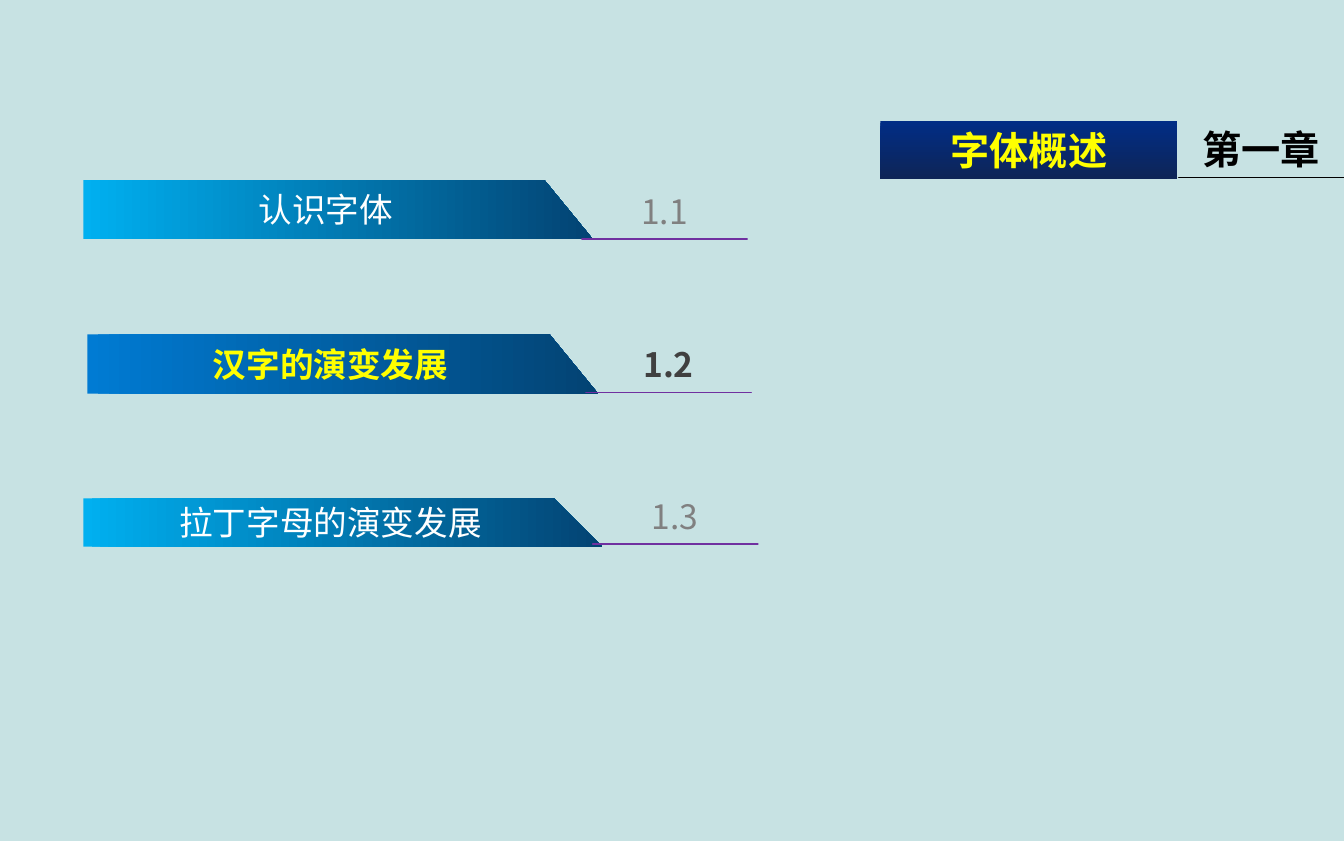
from dataclasses import dataclass

from lxml.etree import SubElement
from pptx import Presentation
from pptx.dml.color import RGBColor as Rgb
from pptx.enum.shapes import MSO_SHAPE as Shape
from pptx.enum.text import MSO_ANCHOR as Anchor, PP_ALIGN as Align
from pptx.oxml.ns import qn
from pptx.util import Inches, Pt


@dataclass(frozen=True)
class Theme:
    """Colours, font and type sizes of the slide."""
    font: str = "Noto Sans CJK SC"
    heading_size: int = 21
    topic_size: int = 18
    rule_width: float = 0.75
    background: str = "C7E2E3"
    heading_fill: tuple = ("012D86", "0E2557")
    topic_fill: tuple = ("00B0F0", "034373")
    current_fill: tuple = ("007BD3", "034373")
    topic_text: str = "FFFFFF"
    highlight: str = "FFFF00"
    number: str = "808080"
    current_number: str = "404040"
    chapter: str = "000000"
    rule: str = "7030A0"


THEME = Theme()


def write(holder, text, size, color, bold=False, insets=(0, 0.04, 0, 0.04)):
    """Put one centred line of text in a shape."""
    frame = holder.text_frame
    frame.word_wrap = True
    frame.vertical_anchor = Anchor.MIDDLE
    (frame.margin_left, frame.margin_top,
     frame.margin_right, frame.margin_bottom) = map(Inches, insets)
    line = frame.paragraphs[0]
    line.alignment = Align.CENTER
    run = line.add_run()
    run.text = text
    run.font.size = Pt(size)
    run.font.bold = bold
    run.font.color.rgb = Rgb.from_string(color)
    run.font.name = THEME.font
    SubElement(run.font._element, qn("a:ea")).set("typeface", THEME.font)


def paint(panel, colors, angle):
    """Give a shape a two-colour gradient without line or shadow."""
    panel.shadow.inherit = False
    panel.line.fill.background()
    panel.fill.gradient()
    panel.fill.gradient_angle = angle
    for stop, color in zip(panel.fill.gradient_stops, colors):
        stop.color.rgb = Rgb.from_string(color)


def add_underlined(slide, text, left, top, size, color, rule, bold):
    """Add a label whose outline is its bottom rule and its top corner."""
    x, y = Inches(left), Inches(top)
    base = y + Inches(0.42)
    outline = slide.shapes.build_freeform(x, base)
    outline.add_line_segments([(x + Inches(1.23), base)], close=True)
    outline.move_to(x, y)
    outline.add_line_segments([(x, y)], close=True)
    label = outline.convert_to_shape()
    label.shadow.inherit = False
    label.fill.background()
    label.line.color.rgb = Rgb.from_string(rule)
    label.line.width = Pt(THEME.rule_width)
    write(label, text, size, color, bold)


def add_banner(slide, text, left, top, width, height, colors, color, bold):
    """Add a topic banner with a slanted right end."""
    right, bottom, slant = left + width, top + height, 0.36
    outline = slide.shapes.build_freeform(Inches(left), Inches(top))
    corners = [(right - slant, top), (right, bottom), (left, bottom)]
    outline.add_line_segments(
        [(Inches(x), Inches(y)) for x, y in corners], close=True)
    banner = outline.convert_to_shape()
    paint(banner, colors, 0)
    write(banner, text, THEME.topic_size, color, bold, (0.06, 0, 0.24, 0))


def add_topic(slide, number, title, banner_box, number_at, current=False):
    """Add a numbered topic, highlighted when it is the current one."""
    fill, title_color, number_color = (
        (THEME.current_fill, THEME.highlight, THEME.current_number) if current
        else (THEME.topic_fill, THEME.topic_text, THEME.number))
    add_banner(slide, title, *banner_box, fill, title_color, current)
    add_underlined(slide, number, *number_at, THEME.topic_size,
                   number_color, THEME.rule, current)


def add_heading(slide, chapter, title):
    """Add the chapter title panel and the chapter number."""
    add_underlined(slide, chapter, 8.77, 0.9, THEME.heading_size,
                   THEME.chapter, THEME.chapter, True)
    panel = slide.shapes.add_shape(
        Shape.RECTANGLE, *map(Inches, (6.55, 0.9, 2.21, 0.43)))
    paint(panel, THEME.heading_fill, 270)
    write(panel, title, THEME.heading_size, THEME.highlight, True,
          (0.07, 0.04, 0.07, 0.04))


def main():
    """Build the chapter contents slide."""
    deck = Presentation()
    deck.slide_width, deck.slide_height = Inches(10), Inches(6.26)
    slide = deck.slides.add_slide(deck.slide_layouts[6])
    slide.background.fill.solid()
    slide.background.fill.fore_color.rgb = Rgb.from_string(THEME.background)
    add_heading(slide, "第一章", "字体概述")
    add_topic(slide, "1.1", "认识字体", (0.62, 1.34, 3.79, 0.44), (4.33, 1.36))
    add_topic(slide, "1.2", "汉字的演变发展", (0.65, 2.49, 3.8, 0.44),
              (4.36, 2.5), current=True)
    add_topic(slide, "1.3", "拉丁字母的演变发展", (0.62, 3.71, 3.86, 0.36),
              (4.41, 3.63))
    deck.save("out.pptx")


if __name__ == "__main__":
    main()
